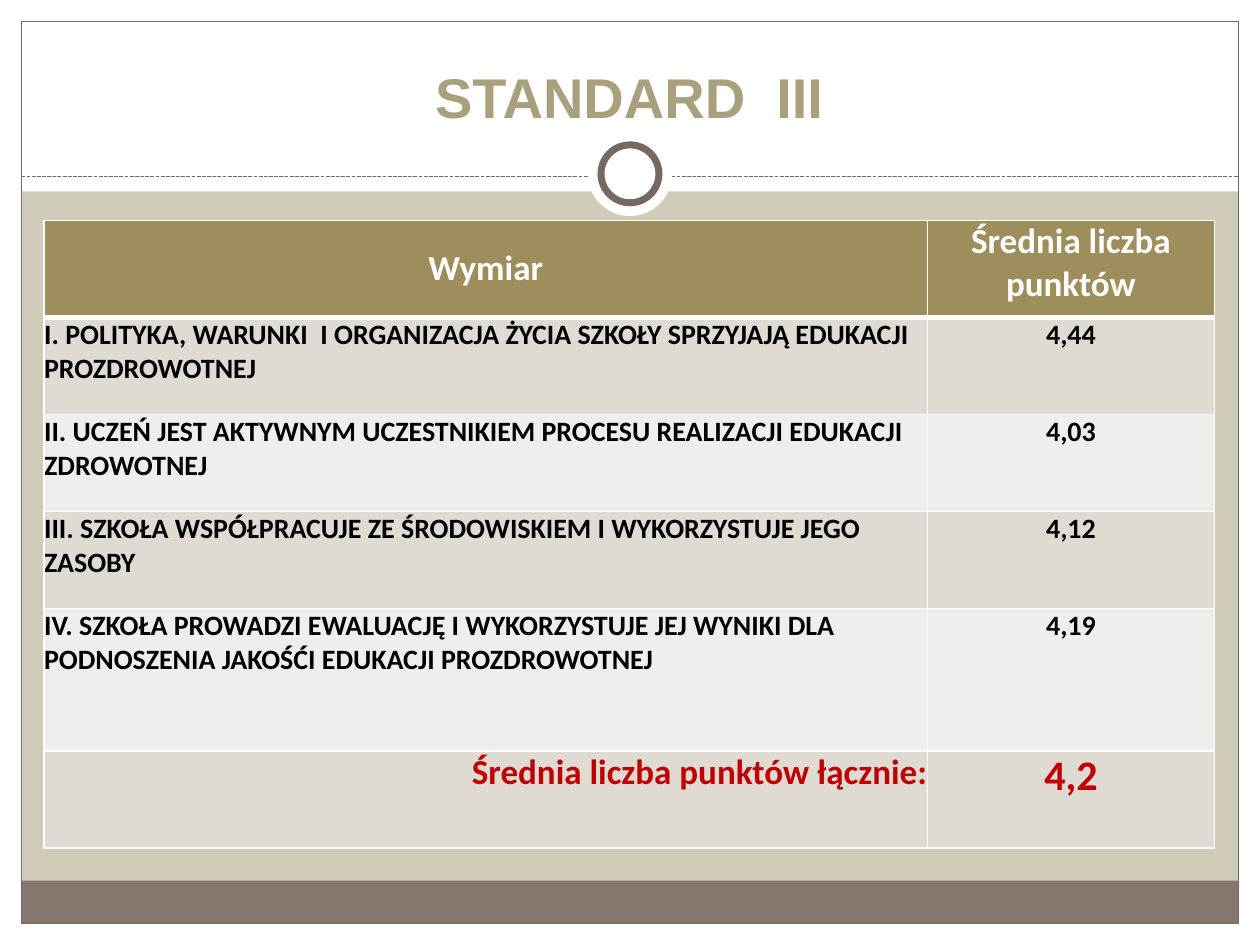
"""Build the STANDARD III slide with its table of average scores."""
import lxml.etree
import pptx
import pptx.dml.color
import pptx.enum.dml
import pptx.enum.shapes
import pptx.enum.text
import pptx.oxml.ns
import pptx.util

WIDTH, HEIGHT = 10, 7.5
MARGIN, HEADER, DIVIDER = 0.17, 1.52, 1.4
FOOTER_TOP, FOOTER_HEIGHT = 6.99, 0.34
WHITE, BROWN, RED, BLACK = "FFFFFF", "756960", "C00000", "000000"
HEADING_FILL, BAND_FILLS = "9E8E5C", ("DFDBD2", "F0EEEA")

TITLE = "STANDARD  III"
HEADINGS = ("Wymiar", "Średnia liczba punktów")
SCORES = [
    ("I. POLITYKA, WARUNKI  I ORGANIZACJA ŻYCIA SZKOŁY SPRZYJAJĄ EDUKACJI PROZDROWOTNEJ", "4,44"),
    ("II. UCZEŃ JEST AKTYWNYM UCZESTNIKIEM PROCESU REALIZACJI EDUKACJI ZDROWOTNEJ", "4,03"),
    ("III. SZKOŁA WSPÓŁPRACUJE ZE ŚRODOWISKIEM I WYKORZYSTUJE JEGO ZASOBY", "4,12"),
    ("IV. SZKOŁA PROWADZI EWALUACJĘ I WYKORZYSTUJE JEJ WYNIKI DLA PODNOSZENIA JAKOŚĆI EDUKACJI PROZDROWOTNEJ", "4,19"),
]
TOTAL = ("Średnia liczba punktów łącznie:", "4,2")
COLUMNS = (7.01, 2.28)
ROW_HEIGHT, TALL_ROW, TALL_HEIGHT = 0.77, 4, 1.13

INCH = pptx.util.Inches
SHAPE = pptx.enum.shapes.MSO_SHAPE
ALIGN = pptx.enum.text.PP_ALIGN
ANCHOR = pptx.enum.text.MSO_ANCHOR


def color(code):
    return pptx.dml.color.RGBColor.from_string(code)


def add_part(page, kind, box, fill=None, line=None, weight=0.75):
    part = page.shapes.add_shape(kind, *map(INCH, box))
    part.shadow.inherit = False
    if fill:
        part.fill.solid()
        part.fill.fore_color.rgb = color(fill)
    else:
        part.fill.background()
    if line:
        part.line.color.rgb = color(line)
        part.line.width = pptx.util.Pt(weight)
    else:
        part.line.fill.background()


def add_circle(page, size, **style):
    box = ((WIDTH - size) / 2, DIVIDER - 0.02 - size / 2, size, size)
    add_part(page, SHAPE.OVAL, box, WHITE, **style)


def write(frame, text, size, code, align, font="Calibri"):
    para = frame.paragraphs[0]
    para.alignment = align
    span = para.add_run()
    span.text = text
    span.font.name = font
    span.font.size = pptx.util.Pt(size)
    span.font.bold = True
    span.font.color.rgb = color(code)


def add_borders(cell, bottom):
    properties = cell._tc.get_or_add_tcPr()
    name = pptx.oxml.ns.qn
    for side, points in (("L", 1), ("R", 1), ("T", 1), ("B", bottom)):
        edge = lxml.etree.SubElement(properties, name(f"a:ln{side}"), w=str(pptx.util.Pt(points)))
        fill = lxml.etree.SubElement(edge, name("a:solidFill"))
        lxml.etree.SubElement(fill, name("a:srgbClr"), val=WHITE)


def add_frame(page):
    bands = [
        (0, HEIGHT - MARGIN, WIDTH, MARGIN, WHITE),
        (0, 0, WIDTH, HEADER, WHITE),
        (0, 0, MARGIN, HEIGHT, WHITE),
        (WIDTH - MARGIN, 0, MARGIN, HEIGHT, WHITE),
        (MARGIN, FOOTER_TOP, WIDTH - 2 * MARGIN, FOOTER_HEIGHT, "85776D"),
    ]
    for *box, fill in bands:
        add_part(page, SHAPE.RECTANGLE, box, fill)
    inside = (MARGIN, MARGIN, WIDTH - 2 * MARGIN, HEIGHT - 2 * MARGIN)
    add_part(page, SHAPE.RECTANGLE, inside, line=BROWN)
    ends = (MARGIN, DIVIDER, WIDTH - MARGIN, DIVIDER)
    divider = page.shapes.add_connector(pptx.enum.shapes.MSO_CONNECTOR.STRAIGHT, *map(INCH, ends))
    divider.line.color.rgb = color(BROWN)
    divider.line.width = pptx.util.Pt(0.75)
    divider.line.dash_style = pptx.enum.dml.MSO_LINE.SQUARE_DOT
    lxml.etree.SubElement(divider._element.spPr, pptx.oxml.ns.qn("a:effectLst"))
    add_circle(page, 0.67)
    add_circle(page, 0.46, line=BROWN, weight=4)


def add_title(page):
    title = page.shapes.title
    title.left, title.top, title.width, title.height = map(INCH, (0.33, 0.25, 9.33, 0.83))
    title.text_frame.vertical_anchor = ANCHOR.BOTTOM
    write(title.text_frame, TITLE, 32, "A9A17E", ALIGN.CENTER, "Arial")
    title.element.getparent().append(title.element)


def add_scores(page):
    rows = [HEADINGS, *SCORES, TOTAL]
    heights = [TALL_HEIGHT if index == TALL_ROW else ROW_HEIGHT for index in range(len(rows))]
    box = (0.35, 1.75, sum(COLUMNS), sum(heights))
    table = page.shapes.add_table(len(rows), len(COLUMNS), *map(INCH, box)).table
    for column, width in zip(table.columns, COLUMNS):
        column.width = INCH(width)
    last = len(rows) - 1
    for index, texts in enumerate(rows):
        table.rows[index].height = INCH(heights[index])
        heading = index == 0
        sizes = {0: (20, 20), last: (20, 24)}.get(index, (16, 16))
        code = {0: WHITE, last: RED}.get(index, BLACK)
        first = {0: ALIGN.CENTER, last: ALIGN.RIGHT}.get(index, ALIGN.LEFT)
        for place, align in enumerate((first, ALIGN.CENTER)):
            cell = table.cell(index, place)
            cell.margin_left = cell.margin_right = cell.margin_top = cell.margin_bottom = 0
            cell.vertical_anchor = ANCHOR.MIDDLE if heading and place == 0 else ANCHOR.TOP
            add_borders(cell, 3 if heading else 1)
            cell.fill.solid()
            cell.fill.fore_color.rgb = color(HEADING_FILL if heading else BAND_FILLS[(index - 1) % 2])
            write(cell.text_frame, texts[place], sizes[place], code, align)


def main():
    deck = pptx.Presentation()
    deck.slide_width, deck.slide_height = INCH(WIDTH), INCH(HEIGHT)
    page = deck.slides.add_slide(deck.slide_layouts[5])
    page.background.fill.solid()
    page.background.fill.fore_color.rgb = color("D0CCB9")
    add_frame(page)
    add_title(page)
    add_scores(page)
    deck.save("out.pptx")


if __name__ == "__main__":
    main()
